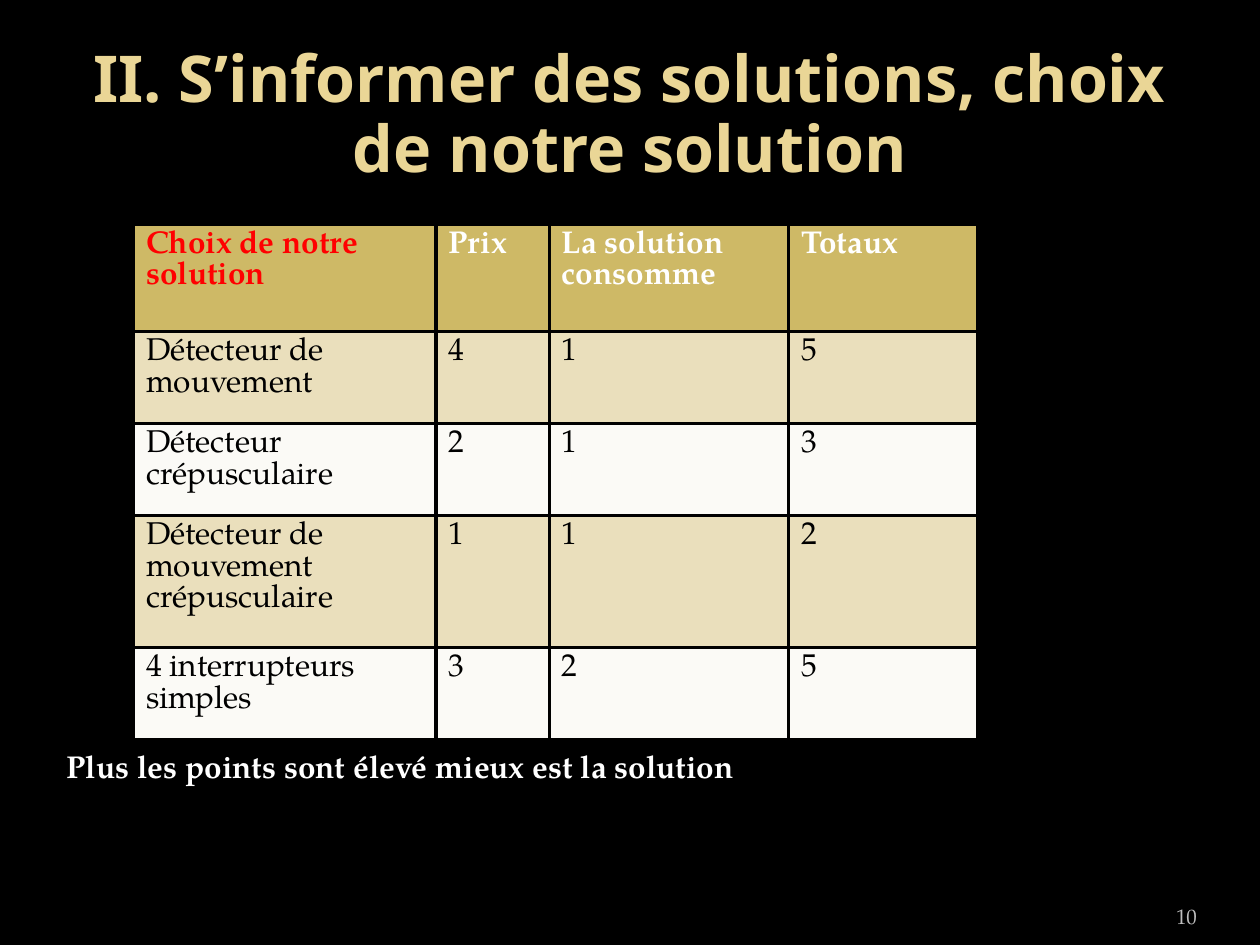
import pptx
import pptx.util
from lxml import etree
from pptx.dml.color import RGBColor
from pptx.enum.text import MSO_ANCHOR, PP_ALIGN
from pptx.oxml.ns import qn
from pptx.util import Inches, Pt

TITLE = "II. S’informer des solutions, choix de notre solution"
NOTE = "Plus les points sont élevé mieux est la solution"
PAGE_NUMBER = "10"
HEADERS = ["Choix de notre solution", "Prix", "La solution consomme", "Totaux"]
SCORES = [
    ("Détecteur de mouvement", 4, 1),
    ("Détecteur crépusculaire", 2, 1),
    ("Détecteur de mouvement crépusculaire", 1, 1),
    ("4 interrupteurs simples", 3, 2),
]
COLUMN_WIDTHS = [2.4, 0.9, 1.9, 1.5]
ROW_HEIGHTS = [0.85, 0.73, 0.73, 1.05, 0.73]
GOLD, BAND, PALE = "CEB966", "EADFBC", "FBFAF6"
BLACK, WHITE, RED = "000000", "FFFFFF", "FF0000"
BODY_FONT, TITLE_FONT = "TeX Gyre Pagella", "Noto Sans"


def rgb(color):
    return RGBColor.from_string(color)


def style(paragraph, size, color, bold=False, font=BODY_FONT):
    paragraph.font.name = font
    paragraph.font.size = Pt(size)
    paragraph.font.bold = bold
    paragraph.font.color.rgb = rgb(color)


def add_text(slide, box, text, align, anchor, side_inset=0.1):
    frame = slide.shapes.add_textbox(*map(Inches, box)).text_frame
    frame.word_wrap = True
    frame.vertical_anchor = anchor
    frame.margin_left = frame.margin_right = Inches(side_inset)
    paragraph = frame.paragraphs[0]
    paragraph.text = text
    paragraph.alignment = align
    return paragraph


def add_borders(cell, color, width):
    properties = cell._tc.get_or_add_tcPr()
    for position, side in enumerate(("lnL", "lnR", "lnT", "lnB")):
        line = etree.Element(qn(f"a:{side}"), w=str(Pt(width)))
        fill = etree.SubElement(line, qn("a:solidFill"))
        etree.SubElement(fill, qn("a:srgbClr"), val=color)
        properties.insert(position, line)


def add_score_table(slide):
    rows = [HEADERS] + [(name, price, use, price + use) for name, price, use in SCORES]
    table = slide.shapes.add_table(
        len(rows), len(HEADERS), Inches(1.06), Inches(1.78),
        Inches(sum(COLUMN_WIDTHS)), Inches(sum(ROW_HEIGHTS)),
    ).table
    for column, width in zip(table.columns, COLUMN_WIDTHS):
        column.width = Inches(width)
    for r, (row, height) in enumerate(zip(rows, ROW_HEIGHTS)):
        table.rows[r].height = Inches(height)
        for c, value in enumerate(row):
            cell = table.cell(r, c)
            cell.text = str(value)
            cell.fill.solid()
            cell.fill.fore_color.rgb = rgb(GOLD if r == 0 else BAND if r % 2 else PALE)
            color = BLACK if r else WHITE if c else RED
            style(cell.text_frame.paragraphs[0], 18, color, bold=r == 0)
            add_borders(cell, BLACK, 2.25)


def main():
    presentation = pptx.Presentation()
    presentation.slide_width, presentation.slide_height = Inches(10), Inches(7.5)
    slide = presentation.slides.add_slide(presentation.slide_layouts[6])
    slide.background.fill.solid()
    slide.background.fill.fore_color.rgb = rgb(BLACK)

    add_score_table(slide)
    title = add_text(slide, (0.5, 0.3, 9, 1.25), TITLE, PP_ALIGN.CENTER, MSO_ANCHOR.MIDDLE)
    title.line_spacing = 0.9
    style(title, 36.9, "EAD696", bold=True, font=TITLE_FONT)
    number = add_text(slide, (8.67, 7.02, 0.83, 0.4), PAGE_NUMBER,
                      PP_ALIGN.RIGHT, MSO_ANCHOR.BOTTOM, side_inset=0)
    style(number, 12, "BDBDBD")
    note = add_text(slide, (0.43, 5.88, 7.09, 0.4), NOTE, PP_ALIGN.LEFT, MSO_ANCHOR.TOP)
    style(note, 18, WHITE, bold=True)

    presentation.save("out.pptx")


if __name__ == "__main__":
    main()
